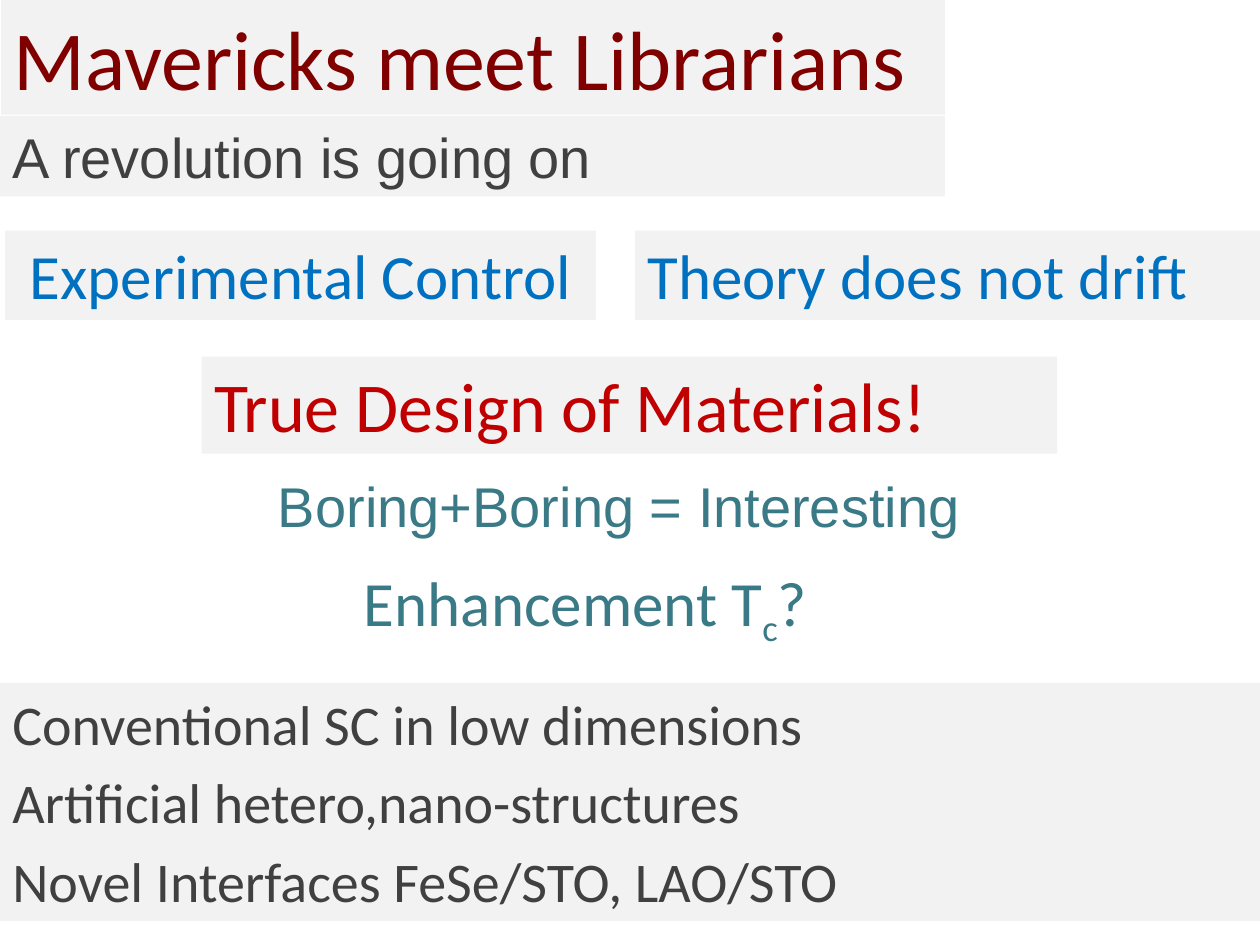
from dataclasses import dataclass
from typing import Optional

from pptx import Presentation
from pptx.dml.color import RGBColor
from pptx.enum.text import MSO_AUTO_SIZE, PP_ALIGN
from pptx.util import Inches, Pt

LEFT, CENTER = PP_ALIGN.LEFT, PP_ALIGN.CENTER
FIT_SHAPE = MSO_AUTO_SIZE.SHAPE_TO_FIT_TEXT

WHITE = RGBColor(0xFF, 0xFF, 0xFF)
PALE_GRAY = RGBColor(0xF2, 0xF2, 0xF2)
DARK_GRAY = RGBColor(0x40, 0x40, 0x40)
MAROON = RGBColor(0x80, 0x00, 0x00)
RED = RGBColor(0xC0, 0x00, 0x00)
BLUE = RGBColor(0x00, 0x70, 0xC0)
TEAL = RGBColor(0x3A, 0x79, 0x86)

SLIDE_WIDTH, SLIDE_HEIGHT = Inches(10), Inches(7.5)
COLUMN = SLIDE_WIDTH / 10
ROW = SLIDE_HEIGHT / 7.5
BAND_HEIGHT = {32: 0.64, 36: 0.71, 40: 0.77, 48: 0.91}  # rows, by text size

TOPICS_TOP, TOPIC_STEP = 5.42, 0.625
TOPICS = (
    "Conventional SC in low dimensions",
    "Artificial hetero,nano-structures",
    "Novel Interfaces FeSe/STO, LAO/STO",
)


@dataclass(frozen=True)
class Band:
    """One line of text; left and width in columns, top in rows."""
    text: str
    left: float
    top: float
    width: float
    size: int
    color: RGBColor
    fill: Optional[RGBColor] = PALE_GRAY
    font: str = "Calibri"
    align: PP_ALIGN = LEFT
    subscript: str = ""
    ending: str = ""


BANDS = [
    Band("Enhancement T", 2.79, 4.42, 4.42, 36, TEAL, WHITE,
         subscript="c", ending="?"),
    Band("Mavericks meet Librarians", 0.01, 0, 7.49, 48, MAROON),
    Band("Theory does not drift", 5.04, 1.83, 4.96, 36, BLUE),
    Band("Experimental Control", 0.04, 1.83, 4.69, 36, BLUE, align=CENTER),
    *(Band(topic, 0, TOPICS_TOP + i * TOPIC_STEP, 10, 32, DARK_GRAY)
      for i, topic in enumerate(TOPICS)),
    Band("True Design of Materials!", 1.6, 2.83, 6.79, 40, RED),
    Band("A revolution is going on", 0, 0.92, 7.5, 32, DARK_GRAY, font="Arial"),
    Band("Boring+Boring = Interesting", 1.75, 3.69, 6.33, 32, TEAL, None,
         "Arial", CENTER),
]


def draw_band(slide, band: Band) -> None:
    box = slide.shapes.add_textbox(
        round(band.left * COLUMN), round(band.top * ROW),
        round(band.width * COLUMN), round(BAND_HEIGHT[band.size] * ROW))
    if band.fill is not None:
        box.fill.solid()
        box.fill.fore_color.rgb = band.fill
    frame = box.text_frame
    frame.word_wrap = True
    frame.auto_size = FIT_SHAPE
    paragraph = frame.paragraphs[0]
    paragraph.alignment = band.align
    paragraph.font.name = band.font
    paragraph.font.size = Pt(band.size)
    paragraph.font.color.rgb = band.color
    paragraph.add_run().text = band.text
    if band.subscript:
        lowered = paragraph.add_run()
        lowered.text = band.subscript
        lowered.font._element.set("baseline", "-25000")
    if band.ending:
        paragraph.add_run().text = band.ending


def main() -> None:
    deck = Presentation()
    deck.slide_width, deck.slide_height = SLIDE_WIDTH, SLIDE_HEIGHT
    slide = deck.slides.add_slide(deck.slide_layouts[6])
    for band in BANDS:
        draw_band(slide, band)
    deck.save("out.pptx")


if __name__ == "__main__":
    main()
